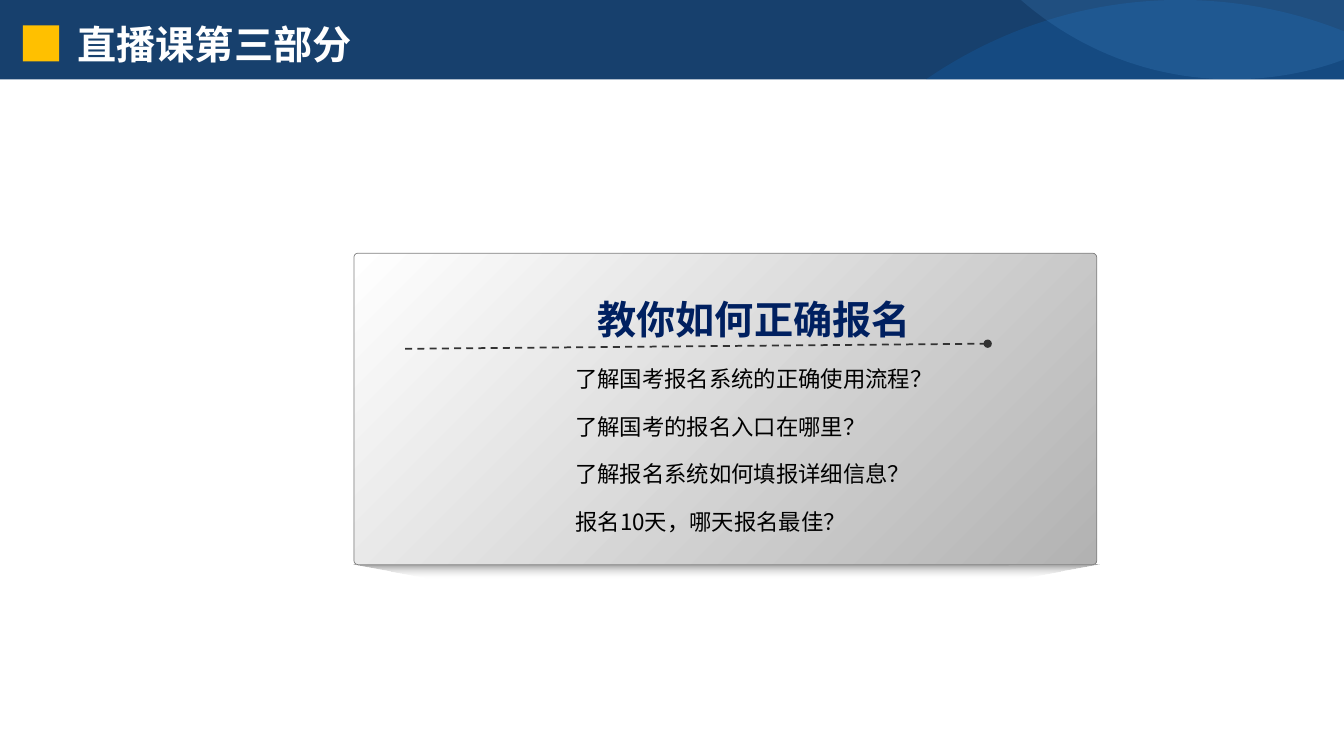
from lxml.etree import SubElement
from pptx import Presentation
from pptx.dml.color import RGBColor
from pptx.enum.dml import MSO_LINE
from pptx.enum.shapes import MSO_CONNECTOR, MSO_SHAPE
from pptx.enum.text import MSO_ANCHOR, MSO_AUTO_SIZE, PP_ALIGN
from pptx.oxml.ns import qn
from pptx.util import Cm, Pt

FONT = "Noto Sans CJK SC"
WHITE = RGBColor(0xFF, 0xFF, 0xFF)
BLACK = RGBColor(0x00, 0x00, 0x00)
NAVY = RGBColor(0x00, 0x20, 0x60)
BAND_BLUE = RGBColor(0x17, 0x40, 0x6D)
WAVE_BLUE = RGBColor(0x0F, 0x6F, 0xC6)
LIGHT_BLUE = RGBColor(0x59, 0xAA, 0xF2)
AMBER = RGBColor(0xFF, 0xC0, 0x00)
DARK_GRAY = RGBColor(0x33, 0x33, 0x33)
MID_GRAY = RGBColor(0x80, 0x80, 0x80)
LIGHT_GRAY = RGBColor(0xB2, 0xB2, 0xB2)

TITLE = "直播课第三部分"
HEADING = "教你如何正确报名"
QUESTIONS = [
    "了解国考报名系统的正确使用流程？",
    "了解国考的报名入口在哪里？",
    "了解报名系统如何填报详细信息？",
    "报名10天，哪天报名最佳？",
]

WIDTH, HEIGHT, BAND_HEIGHT = 33.87, 19.05, 2.0
BAND_BOX = (0, 0, WIDTH, BAND_HEIGHT)
SQUARE_BOX = (0.58, 0.64, 0.91, 0.91)
TITLE_BOX = (1.7, 0.38, 26.49, 1.45)
CARD_BOX = (8.92, 6.38, 18.72, 7.85)
HEADING_BOX = (14.81, 7.32, 8.71, 1.45)
QUESTIONS_BOX = (14.25, 9.07, 10.57, 5.05)
DIVIDER = (10.21, 8.79, 24.89, 8.66)
CARD_SHADOW = [(8.92, 14.22), (10.9, 14.58), (25.73, 14.58), (27.71, 14.22)]
RISING_WAVE = [
    [(29.74, 0), (31.19, 0), (32.59, 0.28), (WIDTH, 0.79)],
    [(WIDTH, BAND_HEIGHT)],
    [(23.34, BAND_HEIGHT), (25.17, 0.74), (27.38, 0), (29.74, 0)],
]
FALLING_WAVE = [
    [(WIDTH, 0)],
    [(WIDTH, 1.5), (33.0, 1.83), (32.03, BAND_HEIGHT), (31.04, BAND_HEIGHT)],
    [(31.04, BAND_HEIGHT), (29.01, BAND_HEIGHT), (27.15, 1.24), (25.73, 0)],
]


def curve_points(segments, steps=24):
    """Return outline points, sampling each four-point segment as a cubic curve."""
    points = []
    for segment in segments:
        if len(segment) == 1:
            points += segment
            continue
        for step in range(steps + 1):
            t = step / steps
            weights = ((1 - t) ** 3, 3 * t * (1 - t) ** 2, 3 * t * t * (1 - t), t ** 3)
            points.append(tuple(sum(w * p[axis] for w, p in zip(weights, segment))
                                for axis in (0, 1)))
    return points


def set_alpha(fill_element, percents):
    """Give each colour inside a fill its opacity."""
    for color, percent in zip(fill_element.iter(qn("a:srgbClr")), percents):
        SubElement(color, qn("a:alpha")).set("val", str(percent * 1000))


def style_shape(shape, color=None):
    """Remove shadow and outline and apply an optional solid fill."""
    shape.shadow.inherit = False
    shape.line.fill.background()
    if color is not None:
        shape.fill.solid()
        shape.fill.fore_color.rgb = color


def set_gradient(shape, colors, angle):
    """Fill a shape with a two-colour linear gradient."""
    shape.fill.gradient()
    shape.fill.gradient_angle = angle
    for stop, color in zip(shape.fill.gradient_stops, colors):
        stop.color.rgb = color


def add_box(slide, kind, box, color=None):
    """Add a preset shape."""
    shape = slide.shapes.add_shape(kind, *map(Cm, box))
    style_shape(shape, color)
    return shape


def add_outline(slide, points, color=None):
    """Add a closed free outline."""
    corners = [(Cm(x), Cm(y)) for x, y in points]
    builder = slide.shapes.build_freeform(*corners[0], scale=1.0)
    builder.add_line_segments(corners[1:], close=True)
    shape = builder.convert_to_shape()
    style_shape(shape, color)
    return shape


def write_text(shape, lines, size, color, bold=False, gap=0):
    """Write one paragraph per line and format its run."""
    frame = shape.text_frame
    frame.text = "\n".join(lines)
    frame.word_wrap = True
    frame.auto_size = MSO_AUTO_SIZE.NONE
    frame.vertical_anchor = MSO_ANCHOR.TOP
    for index, paragraph in enumerate(frame.paragraphs):
        paragraph.alignment = PP_ALIGN.LEFT
        paragraph.space_before = Pt(gap if index else 0)
        for run in paragraph.runs:
            run.font.name = FONT
            run.font.size = Pt(size)
            run.font.bold = bold
            run.font.color.rgb = color
            SubElement(run.font._element, qn("a:ea")).set("typeface", FONT)


def add_header(slide):
    """Draw the title band with its waves, marker and title."""
    add_box(slide, MSO_SHAPE.RECTANGLE, BAND_BOX, BAND_BLUE)
    for wave, color, opacity in ((RISING_WAVE, WAVE_BLUE, 23), (FALLING_WAVE, LIGHT_BLUE, 15)):
        shape = add_outline(slide, curve_points(wave), color)
        set_alpha(shape._element.spPr, [opacity])
    add_box(slide, MSO_SHAPE.RECTANGLE, SQUARE_BOX, AMBER)
    title = slide.shapes.title
    title.left, title.top, title.width, title.height = map(Cm, TITLE_BOX)
    write_text(title, [TITLE], 28, WHITE, bold=True)
    slide.shapes._spTree.append(title._element)


def add_card(slide):
    """Draw the card with its heading, divider and questions."""
    shadow = add_outline(slide, CARD_SHADOW)
    set_gradient(shadow, (DARK_GRAY, WHITE), 270)
    set_alpha(shadow._element.spPr, [50, 0])
    card = add_box(slide, MSO_SHAPE.ROUNDED_RECTANGLE, CARD_BOX)
    card.adjustments[0] = 0.013
    set_gradient(card, (WHITE, LIGHT_GRAY), 315)
    card.line.color.rgb = MID_GRAY
    card.line.width = Pt(0.5)

    divider = slide.shapes.add_connector(MSO_CONNECTOR.STRAIGHT, *map(Cm, DIVIDER))
    divider.line.color.rgb = DARK_GRAY
    divider.line.width = Pt(1.25)
    divider.line.dash_style = MSO_LINE.DASH
    SubElement(divider.line._get_or_add_ln(), qn("a:tailEnd")).set("type", "oval")
    SubElement(divider._element.spPr, qn("a:effectLst"))

    heading = slide.shapes.add_textbox(*map(Cm, HEADING_BOX))
    write_text(heading, [HEADING], 28, NAVY, bold=True)
    questions = slide.shapes.add_textbox(*map(Cm, QUESTIONS_BOX))
    write_text(questions, QUESTIONS, 16, BLACK, gap=15)


def main():
    """Build and save the slide."""
    presentation = Presentation()
    presentation.slide_width, presentation.slide_height = Cm(WIDTH), Cm(HEIGHT)
    slide = presentation.slides.add_slide(presentation.slide_layouts[5])
    add_header(slide)
    add_card(slide)
    presentation.save("out.pptx")


if __name__ == "__main__":
    main()
